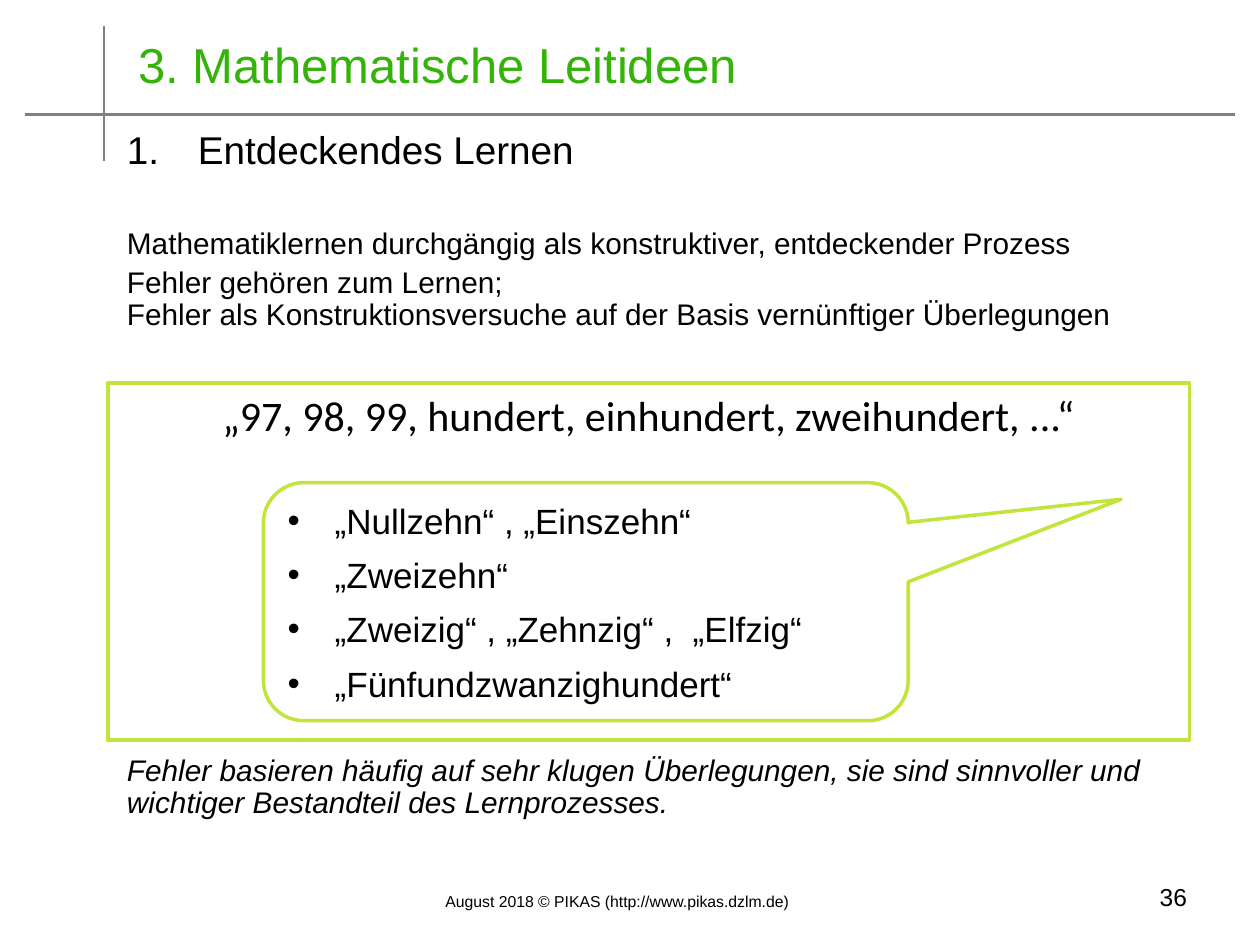
from lxml import etree
from pptx import Presentation
from pptx.dml.color import RGBColor
from pptx.enum.shapes import MSO_CONNECTOR, MSO_SHAPE
from pptx.enum.text import MSO_ANCHOR, PP_ALIGN
from pptx.oxml.ns import qn
from pptx.util import Cm, Pt

COLORS = {"title": "34B409", "text": "000000", "rule": "808080", "frame": "C1E53B"}


class LeitideenSlide:
    """Style of the deck and the slide being filled."""

    font = "Arial"
    frame_width = Pt(2)
    rule_width = Pt(1.25)

    def __init__(self, slide):
        self.slide = slide

    def color(self, name):
        return RGBColor.from_string(COLORS[name])

    def rule(self, x1, y1, x2, y2):
        line = self.slide.shapes.add_connector(
            MSO_CONNECTOR.STRAIGHT, Cm(x1), Cm(y1), Cm(x2), Cm(y2))
        line.line.color.rgb = self.color("rule")
        line.line.width = self.rule_width
        etree.SubElement(line._element.spPr, qn("a:effectLst"))

    def fill_text(self, frame, lines, size, color="text", font=None, italic=False,
                  align=PP_ALIGN.LEFT, anchor=MSO_ANCHOR.TOP, spacing=None,
                  before=0, after=0, marker=None, indent=0):
        frame.word_wrap = True
        frame.vertical_anchor = anchor
        for number, line in enumerate(lines):
            paragraph = frame.add_paragraph() if number else frame.paragraphs[0]
            paragraph.text = line
            paragraph.alignment = align
            paragraph.line_spacing = spacing
            paragraph.space_before = Pt(before if number else 0)
            paragraph.space_after = Pt(after)
            if marker:
                self.mark(paragraph, marker, indent)
            paragraph.font.name = font or self.font
            paragraph.font.size = Pt(size)
            paragraph.font.italic = italic
            paragraph.font.color.rgb = self.color(color)

    def mark(self, paragraph, marker, indent):
        properties = paragraph._p.get_or_add_pPr()
        properties.set("marL", str(Cm(indent)))
        properties.set("indent", str(-Cm(indent)))
        if marker == "1.":
            etree.SubElement(properties, qn("a:buAutoNum"), type="arabicPeriod")
        else:
            etree.SubElement(properties, qn("a:buFont"), typeface=self.font)
            etree.SubElement(properties, qn("a:buChar"), char=marker)

    def text(self, x, y, width, height, lines, size, **style):
        box = self.slide.shapes.add_textbox(Cm(x), Cm(y), Cm(width), Cm(height))
        self.fill_text(box.text_frame, lines, size, **style)

    def framed(self, kind, x, y, width, height, lines, size, adjustments=(), **style):
        shape = self.slide.shapes.add_shape(kind, Cm(x), Cm(y), Cm(width), Cm(height))
        for number, value in enumerate(adjustments):
            shape.adjustments[number] = value
        shape.shadow.inherit = False
        shape.fill.background()
        shape.line.color.rgb = self.color("frame")
        shape.line.width = self.frame_width
        self.fill_text(shape.text_frame, lines, size, **style)


def main():
    deck = Presentation()
    deck.slide_width, deck.slide_height = Cm(25.4), Cm(19.05)
    page = LeitideenSlide(deck.slides.add_slide(deck.slide_layouts[6]))

    # Crossing rules and title
    page.rule(0.5, 2.31, 24.9, 2.31)
    page.rule(2.1, 0.53, 2.1, 3.25)
    page.text(2.54, 0.43, 21.59, 1.7, ["3. Mathematische Leitideen"], 28,
              color="title", anchor=MSO_ANCHOR.MIDDLE)

    # Heading, theses and conclusion share one column
    left, width = 2.31, 22.6
    page.text(left, 2.51, width, 1.1, ["Entdeckendes Lernen"], 22.1,
              spacing=0.9, marker="1.", indent=1.43)
    page.text(left, 4.48, width, 2.3, [
        "Mathematiklernen durchgängig als konstruktiver, entdeckender Prozess",
        "Fehler gehören zum Lernen;\vFehler als Konstruktionsversuche auf der "
        "Basis vernünftiger Überlegungen",
    ], 17, spacing=0.9, before=4)
    page.text(left, 15.11, width, 1.6, [
        "Fehler basieren häufig auf sehr klugen Überlegungen, sie sind "
        "sinnvoller und wichtiger Bestandteil des Lernprozesses.",
    ], 17, spacing=0.9, italic=True)

    # Counting example with children's number words
    page.framed(MSO_SHAPE.RECTANGLE, 2.18, 7.72, 21.8, 7.2,
                ["„97, 98, 99, hundert, einhundert, zweihundert, ...“"], 24,
                font="Calibri", align=PP_ALIGN.CENTER)
    page.framed(MSO_SHAPE.ROUNDED_RECTANGULAR_CALLOUT, 5.31, 9.73, 13, 4.8, [
        "„Nullzehn“ , „Einszehn“",
        "„Zweizehn“",
        "„Zweizig“ , „Zehnzig“ ,  „Elfzig“",
        "„Fünfundzwanzighundert“",
    ], 20, adjustments=(0.83, -0.43, 0.17), anchor=MSO_ANCHOR.MIDDLE,
        after=7, marker="•", indent=0.95)

    # Footer and page number
    page.text(8.64, 17.86, 7.6, 0.64,
              ["August 2018 © PIKAS (http://www.pikas.dzlm.de)"], 9,
              align=PP_ALIGN.CENTER)
    page.text(21.23, 17.65, 2.95, 0.79, ["36"], 14, align=PP_ALIGN.RIGHT)

    deck.save("out.pptx")


if __name__ == "__main__":
    main()
